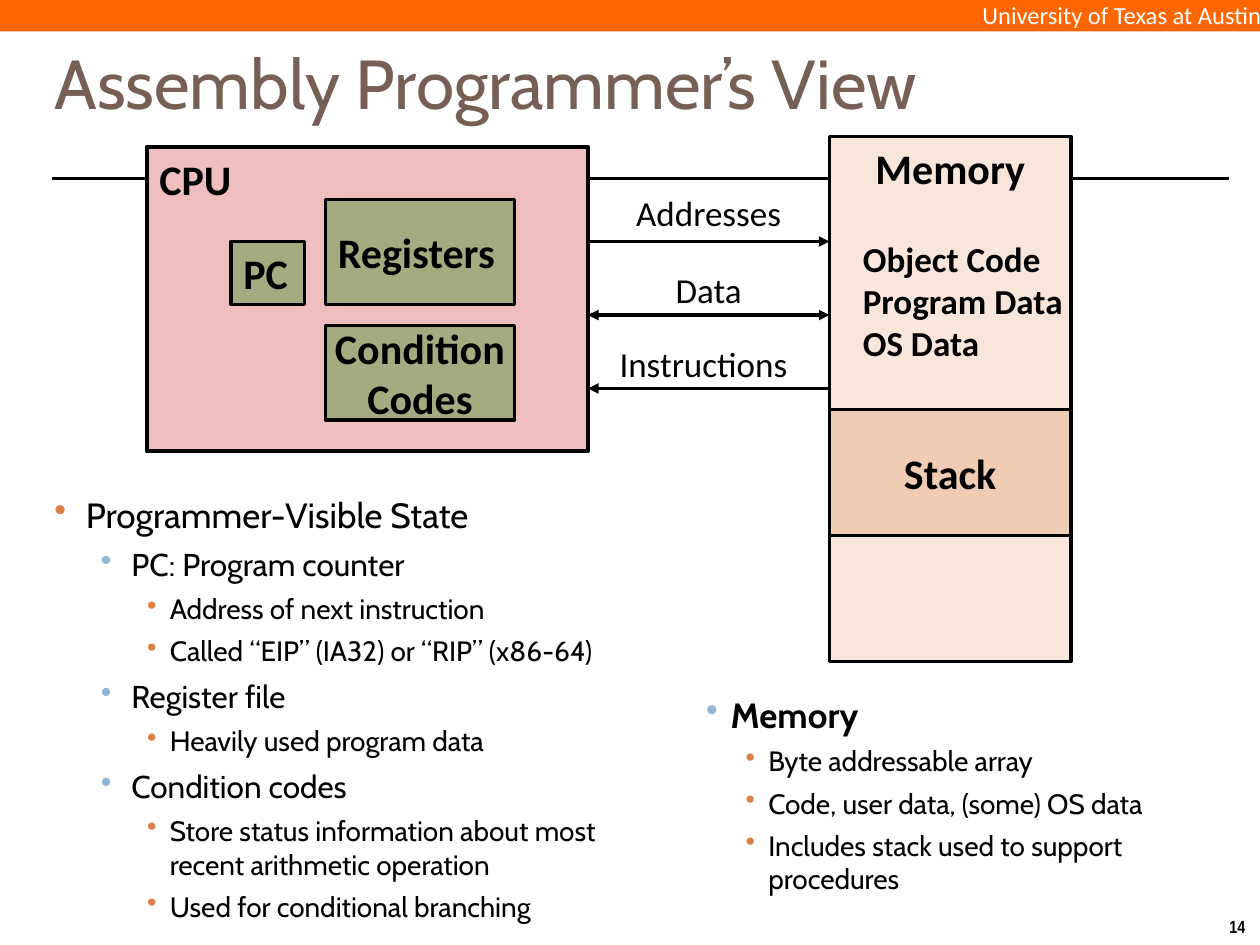
from dataclasses import dataclass, field
from typing import Any, Optional

from lxml.etree import SubElement as Sub
from pptx import Presentation as Deck
from pptx.dml.color import RGBColor as Rgb
from pptx.enum.shapes import MSO_CONNECTOR as Wire, MSO_SHAPE as Form
from pptx.enum.text import MSO_ANCHOR as Anchor, PP_ALIGN as Align
from pptx.oxml.ns import qn
from pptx.util import Pt

HUES = {
    "ink": "000000", "white": "FFFFFF", "band": "FF6600", "title": "775F55",
    "rose": "EFBFBF", "green": "A5AB81", "cream": "F8E6DA", "peach": "F1CCB5",
    "rust": "DD8047", "sky": "94B6D2",
}
MID = Anchor.MIDDLE
MARGINS = ("margin_left", "margin_top", "margin_right", "margin_bottom")


@dataclass
class Style:
    size: float = 24
    bold: bool = True
    name: str = "Calibri"
    hue: str = "ink"


@dataclass
class Line:
    text: str
    style: Style
    align: Any = Align.LEFT
    gap: float = 0
    left: float = 0
    hang: float = 0
    dot: str = ""


@dataclass
class Box:
    rect: tuple
    lines: list
    fill: str = ""
    edge: float = 0
    frame: dict = field(default_factory=dict)
    inset: tuple = (7.2, 3.6, 7.2, 3.6)


@dataclass
class Level:
    size: float
    gap: float
    left: float
    hang: float
    dot: str


@dataclass
class Link:
    y: float
    text: str
    top: float
    width: float
    head: bool
    tail: bool


def tint(key: str) -> Rgb:
    return Rgb.from_string(HUES[key])


def apply(item: Any, values: dict) -> None:
    for key, value in values.items():
        setattr(item, key, value)


def write(para: Any, line: Line) -> None:
    look = line.style
    apply(para, {"alignment": line.align, "space_before": Pt(line.gap)})
    run = para.add_run()
    run.text = line.text
    apply(run.font, {"size": Pt(look.size), "bold": look.bold, "name": look.name})
    run.font.color.rgb = tint(look.hue)
    if line.dot:
        props = para._p.get_or_add_pPr()
        props.set("marL", str(Pt(line.left)))
        props.set("indent", str(Pt(-line.hang)))
        Sub(Sub(props, qn("a:buClr")), qn("a:srgbClr")).set("val", HUES[line.dot])
        Sub(props, qn("a:buChar")).set("char", "•")


def draw(slide: Any, box: Box) -> None:
    rect = [Pt(n) for n in box.rect]
    if box.fill:
        shape = slide.shapes.add_shape(Form.RECTANGLE, *rect)
        shape.shadow.inherit = False
        shape.fill.solid()
        shape.fill.fore_color.rgb = tint(box.fill)
        if box.edge:
            shape.line.color.rgb = tint("ink")
            shape.line.width = Pt(box.edge)
        else:
            shape.line.fill.background()
    else:
        shape = slide.shapes.add_textbox(*rect)
    frame = shape.text_frame
    base = {"word_wrap": True, "vertical_anchor": Anchor.TOP}
    apply(frame, base | box.frame | dict(zip(MARGINS, map(Pt, box.inset))))
    for i, line in enumerate(box.lines):
        write(frame.add_paragraph() if i else frame.paragraphs[0], line)


def rule(slide: Any, left: float, right: float, y: float, width: float,
         head: bool = False, tail: bool = False) -> None:
    wire = slide.shapes.add_connector(Wire.STRAIGHT, Pt(left), Pt(y), Pt(right), Pt(y))
    wire.line.color.rgb = tint("ink")
    wire.line.width = Pt(width)
    props = wire._element.spPr
    stroke = props.find(qn("a:ln"))
    for tag, shown in (("a:headEnd", head), ("a:tailEnd", tail)):
        if shown:
            Sub(stroke, qn(tag)).set("type", "triangle")
    Sub(props, qn("a:effectLst"))


def points(rows: list, levels: list, lead: Optional[Style] = None) -> list:
    made = []
    for i, (depth, text) in enumerate(rows):
        lev = levels[depth]
        style = lead if lead and i == 0 else Style(lev.size, False, "Cabin")
        made.append(Line(text, style, Align.LEFT, lev.gap, lev.left, lev.hang, lev.dot))
    return made


def part(rect: tuple, fill: str, *texts: str, align: Any = Align.CENTER,
         edge: float = 2, **frame: Any) -> Box:
    lines = [Line(text, Style(), align) for text in texts]
    return Box(rect, lines, fill, edge, {"word_wrap": False} | frame)


STATE = [
    (0, "Programmer-Visible State"),
    (1, "PC: Program counter"),
    (2, "Address of next instruction"),
    (2, "Called “EIP” (IA32) or “RIP” (x86-64)"),
    (1, "Register file"),
    (2, "Heavily used program data"),
    (1, "Condition codes"),
    (2, "Store status information about most recent arithmetic operation"),
    (2, "Used for conditional branching"),
]
STORE = [
    (0, "Memory"),
    (1, "Byte addressable array"),
    (1, "Code, user data, (some) OS data"),
    (1, "Includes stack used to support procedures"),
]
WIDE = [Level(20, 7, 18, 18, "rust"), Level(18, 5.5, 44, 17.5, "sky"),
        Level(16, 5, 66, 13, "rust")]
SLIM = [Level(20, 5.5, 23, 14, "sky"), Level(16, 5, 44.5, 13, "rust")]
LINKS = [
    Link(138, "Addresses", 106, 138, False, True),
    Link(180, "Data", 150, 138, True, True),
    Link(222, "Instructions", 192, 132, True, False),
]
CODE = ["Object Code", "Program Data", "OS Data"]
BACK = [
    Box((0, 0, 720.72, 18),
        [Line("University of Texas at Austin", Style(14, False, hue="white"), Align.RIGHT)],
        "band", frame={"word_wrap": False}, inset=(0, 0, 0, 0)),
    Box((695.5, 520, 24.5, 19.5), [Line("14", Style(10, True, "Arial Narrow"))],
        frame={"word_wrap": False}),
]
FRONT = [
    part((84, 84, 252, 174), "rose", "CPU", align=Align.LEFT, edge=2.25, word_wrap=True),
    Box((24, 24, 569, 45),
        [Line("Assembly Programmer’s View", Style(39.6, False, "Cabin", "title"))],
        frame={"vertical_anchor": MID}),
    Box((24, 278.5, 343.5, 243.5), points(STATE, WIDE)),
    Box((387.5, 392.5, 321, 124), points(STORE, SLIM, Style(20, True, "Cabin"))),
    part((132, 138, 42, 36), "green", "PC", align=Align.LEFT, vertical_anchor=MID),
    part((186, 114, 108, 60), "green", "Registers", align=Align.LEFT, vertical_anchor=MID),
    part((474, 78, 138, 300), "cream", "Memory"),
    Box((486, 132, 138, 80), [Line(text, Style(20)) for text in CODE]),
    part((474, 234, 138, 72), "peach", "Stack", vertical_anchor=MID),
    part((186, 186, 108, 54), "green", "Condition", "Codes", vertical_anchor=MID),
]


def main() -> None:
    deck = Deck()
    apply(deck, {"slide_width": Pt(720), "slide_height": Pt(540)})
    slide = deck.slides.add_slide(deck.slide_layouts[6])
    for box in BACK:
        draw(slide, box)
    rule(slide, 30, 702, 102, 1.5)
    for box in FRONT:
        draw(slide, box)
    for link in LINKS:
        rule(slide, 336, 474, link.y, 2, link.head, link.tail)
        label = Line(link.text, Style(20, False), Align.CENTER)
        draw(slide, Box((336, link.top, link.width, 31), [label]))
    deck.save("out.pptx")


if __name__ == "__main__":
    main()
